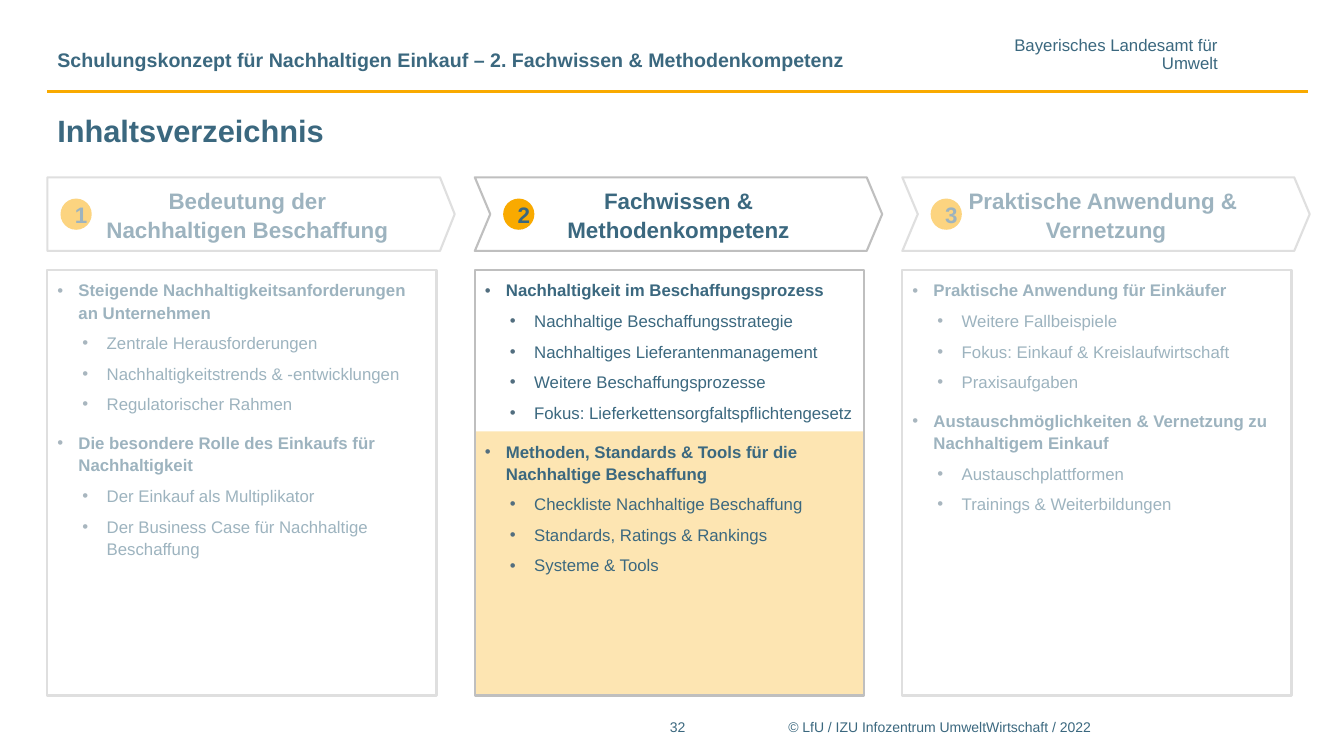
from lxml.etree import SubElement
from pptx import Presentation
from pptx.dml.color import RGBColor
from pptx.enum.shapes import MSO_CONNECTOR, MSO_SHAPE
from pptx.enum.text import MSO_ANCHOR, PP_ALIGN
from pptx.oxml.ns import qn
from pptx.util import Inches, Pt

HEAD = "Schulungskonzept für Nachhaltigen Einkauf – 2. Fachwissen & Methodenkompetenz"
OFFICE = ["Bayerisches Landesamt für", "Umwelt"]
TITLE = "Inhaltsverzeichnis"
PAGE = "32"
RIGHTS = "© LfU / IZU\u00a0Infozentrum UmweltWirtschaft / 2022"

# Each part: heading, then topics with their points
PARTS = [
    ("Bedeutung der\vNachhaltigen Beschaffung", [
        ("Steigende Nachhaltigkeitsanforderungen an Unternehmen", [
            "Zentrale Herausforderungen",
            "Nachhaltigkeitstrends & -entwicklungen",
            "Regulatorischer Rahmen"]),
        ("Die besondere Rolle des Einkaufs für Nachhaltigkeit", [
            "Der Einkauf als Multiplikator",
            "Der Business Case für Nachhaltige Beschaffung"])]),
    ("Fachwissen & Methodenkompetenz", [
        ("Nachhaltigkeit im Beschaffungsprozess", [
            "Nachhaltige Beschaffungsstrategie",
            "Nachhaltiges Lieferantenmanagement",
            "Weitere Beschaffungsprozesse",
            "Fokus: Lieferkettensorgfaltspflichtengesetz"]),
        ("Methoden, Standards & Tools für die Nachhaltige Beschaffung", [
            "Checkliste Nachhaltige Beschaffung",
            "Standards, Ratings & Rankings",
            "Systeme & Tools"])]),
    ("Praktische Anwendung & \vVernetzung", [
        ("Praktische Anwendung für Einkäufer", [
            "Weitere Fallbeispiele",
            "Fokus: Einkauf & Kreislaufwirtschaft",
            "Praxisaufgaben"]),
        ("Austauschmöglichkeiten & Vernetzung zu Nachhaltigem Einkauf", [
            "Austauschplattformen",
            "Trainings & Weiterbildungen"])]),
]
ACTIVE = 1

THEME = {
    "font": "Arial", "text": "3B687F", "bullet": "526E7F", "accent": "F9AA00",
    "edge": "BFBFBF", "veil": "FFFFFF",
    "title": 22, "step": 16, "head": 14, "body": 12, "foot": 10,
}
LEFT, PITCH = 0.47, 4.24
STEP_TOP, STEP_W, STEP_H = 1.76, 4.04, 0.73
BOX_TOP, BOX_W, BOX_H = 2.68, 3.86, 4.22
MARK_TOP, MARK_H = 4.28, 2.62
DOT = 0.31

deck = Presentation()
deck.slide_width, deck.slide_height = Inches(13.33), Inches(7.5)
slide = deck.slides.add_slide(deck.slide_layouts[6])


def color(key):
    return RGBColor.from_string(THEME[key])


def write(par, text, size, bold=False, align=PP_ALIGN.LEFT, lead=None):
    par.alignment = align
    if lead:
        par.line_spacing = lead
    for i, line in enumerate(text.split("\v")):
        if i:
            par.add_line_break()
        run = par.add_run()
        run.text = line
        font = run.font
        font.name, font.size, font.bold = THEME["font"], Pt(THEME[size]), bold
        font.color.rgb = color("text")


def pad(frame, x, y):
    frame.margin_left = frame.margin_right = Inches(x)
    frame.margin_top = frame.margin_bottom = Inches(y)


def label(place, lines, size, anchor=MSO_ANCHOR.TOP, **style):
    frame = slide.shapes.add_textbox(*map(Inches, place)).text_frame
    frame.word_wrap = True
    frame.vertical_anchor = anchor
    for i, line in enumerate(lines):
        write(frame.add_paragraph() if i else frame.paragraphs[0], line, size, **style)
    return frame


def block(kind, place, fill=None, alpha=None, edge=False):
    """Add a preset shape; alpha is the fill's opacity in percent."""
    shape = slide.shapes.add_shape(kind, *map(Inches, place))
    shape.shadow.inherit = False
    if fill:
        shape.fill.solid()
        shape.fill.fore_color.rgb = color(fill)
    else:
        shape.fill.background()
    if alpha:
        tint = shape.fill._xPr.find(qn("a:solidFill"))[0]
        SubElement(tint, qn("a:alpha")).set("val", str(alpha * 1000))
    if edge:
        shape.line.color.rgb = color("edge")
        shape.line.width = Pt(1.5)
    else:
        shape.line.fill.background()
    return shape


def bullet(par, level):
    par.level = level
    props = par._p.get_or_add_pPr()
    left, hang = ((0.21, 0.21), (0.49, 0.24))[level]
    props.set("marL", str(Inches(left)))
    props.set("indent", str(-Inches(hang)))
    tint = SubElement(props, qn("a:buClr"))
    SubElement(tint, qn("a:srgbClr")).set("val", THEME["bullet"])
    SubElement(props, qn("a:buFont")).set("typeface", THEME["font"])
    SubElement(props, qn("a:buChar")).set("char", "•")


def step(x, num, text):
    first = num == 1
    kind = MSO_SHAPE.PENTAGON if first else MSO_SHAPE.CHEVRON
    arrow = block(kind, (x, STEP_TOP, STEP_W, STEP_H), edge=True)
    arrow.adjustments[0] = 0.2 if first else 0.21
    dot_x = x + (0.13 if first else 0.28)
    dot_y = STEP_TOP + (STEP_H - DOT) / 2
    dot = block(MSO_SHAPE.OVAL, (dot_x, dot_y, DOT, DOT), "accent")
    pad(arrow.text_frame, 0.04, 0.04)
    for shape, words, lead in ((arrow, text, 1.06), (dot, str(num), None)):
        shape.text_frame.vertical_anchor = MSO_ANCHOR.MIDDLE
        write(shape.text_frame.paragraphs[0], words, "step", True, PP_ALIGN.CENTER, lead)


def panel(x, topics):
    frame = block(MSO_SHAPE.RECTANGLE, (x, BOX_TOP, BOX_W, BOX_H), edge=True).text_frame
    frame.vertical_anchor = MSO_ANCHOR.TOP
    pad(frame, 0.1, 0.08)
    rows = [(level, text) for topic, points in topics
            for level, text in [(0, topic)] + [(1, point) for point in points]]
    for i, (level, text) in enumerate(rows):
        par = frame.add_paragraph() if i else frame.paragraphs[0]
        bullet(par, level)
        write(par, text, "body", bold=level == 0, lead=1.1)
        par.space_before = Pt((3 if level else 9) if i else 0)
        par.space_after = Pt(3)


rule = slide.shapes.add_connector(
    MSO_CONNECTOR.STRAIGHT, *map(Inches, (LEFT, 0.91, 12.97, 0.91)))
rule.line.color.rgb = color("accent")
rule.line.width = Pt(2)
SubElement(rule._element.spPr, qn("a:effectLst"))

office = label((10.05, 0.38, 2.03, 0.34), OFFICE, "body", align=PP_ALIGN.RIGHT, lead=0.85)
office.word_wrap = False
pad(office, 0, 0)
label((7.72, 7.08, 5.36, 0.31), [RIGHTS], "foot")
label((6.46, 7.08, 0.52, 0.31), [PAGE], "foot", align=PP_ALIGN.CENTER)
label((LEFT, 1.02, 12.5, 0.55), [TITLE], "title", MSO_ANCHOR.MIDDLE, bold=True)
label((LEFT, 0.24, 8.88, 0.52), [HEAD], "head", MSO_ANCHOR.BOTTOM, bold=True, lead=0.85)

for i, (name, topics) in enumerate(PARTS):
    x = LEFT + i * PITCH
    if i == ACTIVE:
        block(MSO_SHAPE.RECTANGLE, (x, MARK_TOP, BOX_W, MARK_H), "accent", 30)
    step(x, i + 1, name)
    panel(x, topics)
    if i != ACTIVE:
        block(MSO_SHAPE.RECTANGLE, (x - 0.1, 1.7, 4.16, 5.25), "veil", 50)

deck.save("out.pptx")
